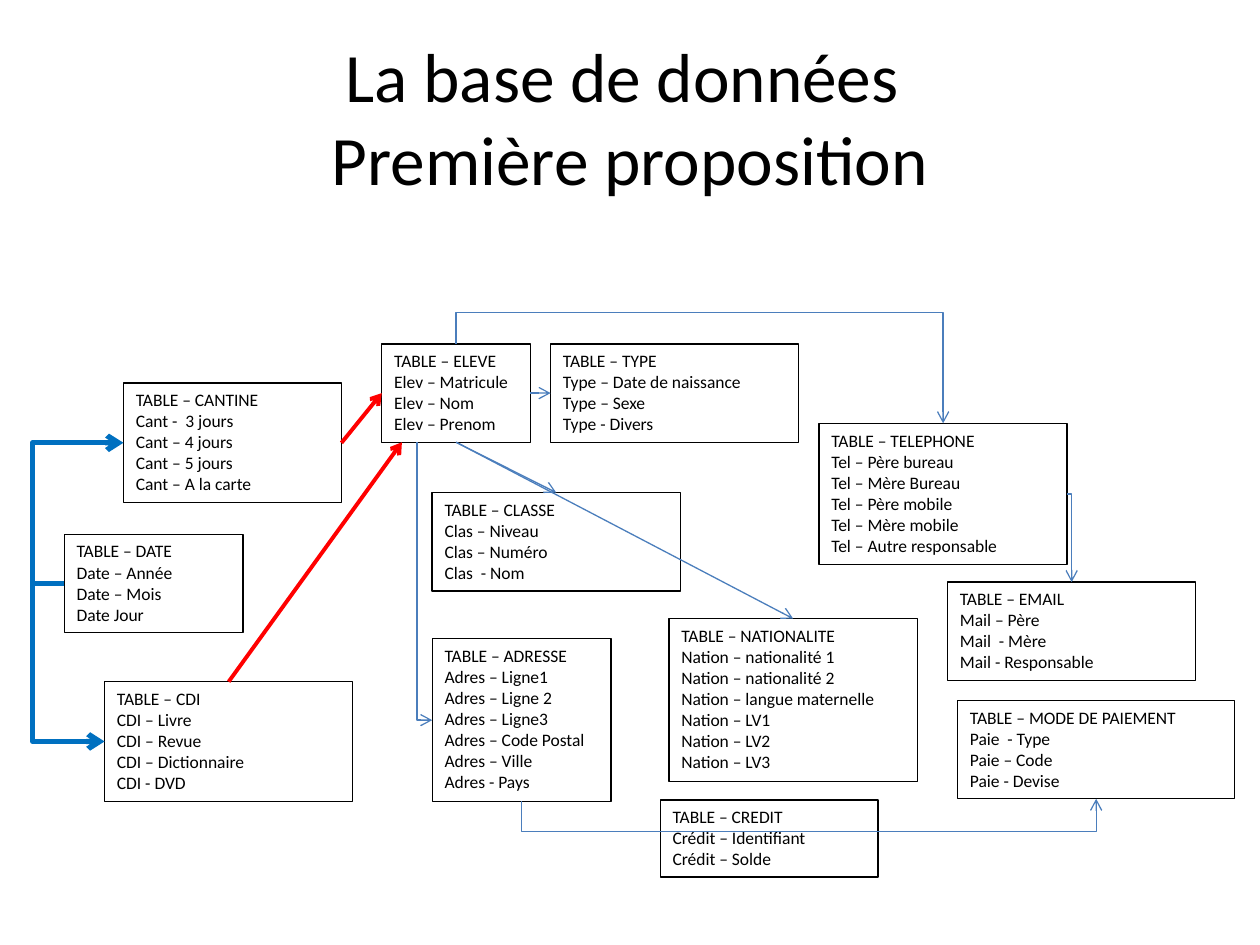
from lxml import etree
from pptx import Presentation
from pptx.dml.color import RGBColor
from pptx.enum.shapes import MSO_CONNECTOR
from pptx.enum.text import MSO_ANCHOR, MSO_AUTO_SIZE, PP_ALIGN
from pptx.oxml.ns import qn
from pptx.util import Inches, Pt

COLORS = {"text": "000000", "link": "4B7EBC", "date": "0070C0", "alert": "FF0000"}
FONT = "Calibri"
LINE_HEIGHT, PADDING = 0.17, 0.1

# name: (left, top, width, lines)
TABLES = {
    "ELEVE": (3.03, 2.73, 1.18, ["Elev – Matricule", "Elev – Nom", "Elev – Prenom"]),
    "ADRESSE": (3.43, 5.07, 1.42, ["Adres – Ligne1", "Adres – Ligne 2", "Adres – Ligne3",
                                   "Adres – Code Postal", "Adres – Ville", "Adres - Pays"]),
    "CLASSE": (3.43, 3.91, 1.97, ["Clas – Niveau", "Clas – Numéro", "Clas  - Nom"]),
    "MODE DE PAIEMENT": (7.6, 5.56, 2.2, ["Paie  - Type", "Paie – Code", "Paie - Devise"]),
    "CANTINE": (0.98, 3.04, 1.73, ["Cant -  3 jours", "Cant – 4 jours", "Cant – 5 jours",
                                   "Cant – A la carte"]),
    "CDI": (0.83, 5.41, 1.97, ["CDI – Livre", "CDI – Revue", "CDI – Dictionnaire", "CDI - DVD"]),
    "TELEPHONE": (6.5, 3.36, 1.97, ["Tel – Père bureau", "Tel – Mère Bureau", "Tel – Père mobile",
                                    "Tel – Mère mobile", "Tel – Autre responsable"]),
    "EMAIL": (7.52, 4.62, 1.97, ["Mail – Père", "Mail  - Mère", "Mail - Responsable"]),
    "NATIONALITE": (5.31, 4.91, 1.97, ["Nation – nationalité 1", "Nation – nationalité 2",
                                       "Nation – langue maternelle", "Nation – LV1",
                                       "Nation – LV2", "Nation – LV3"]),
    "TYPE": (4.37, 2.73, 1.97, ["Type – Date de naissance", "Type – Sexe", "Type - Divers"]),
    "DATE": (0.51, 4.24, 1.42, ["Date – Année", "Date – Mois", "Date Jour"]),
    "CREDIT": (5.24, 6.35, 1.73, ["Crédit – Identifiant", "Crédit – Solde"]),
}


def side(name, where):
    """Midpoint of one side of a table box."""
    left, top, width, lines = TABLES[name]
    height = PADDING + LINE_HEIGHT * (len(lines) + 1)
    fx, fy = {"left": (0, 0.5), "right": (1, 0.5), "top": (0.5, 0), "bottom": (0.5, 1)}[where]
    return left + fx * width, top + fy * height


class SchemaSlide:
    def __init__(self, slide):
        self.slide = slide

    def text(self, left, top, width, height, lines, size):
        box = self.slide.shapes.add_textbox(*map(Inches, (left, top, width, height)))
        frame = box.text_frame
        frame.word_wrap = True
        frame.text = "\n".join(lines)
        for paragraph in frame.paragraphs:
            for run in paragraph.runs:
                run.font.name = FONT
                run.font.size = Pt(size)
                run.font.color.rgb = RGBColor.from_string(COLORS["text"])
        return box

    def title(self, text):
        frame = self.text(0.5, 0.3, 9, 1.25, [text], 39.6).text_frame
        frame.vertical_anchor = MSO_ANCHOR.MIDDLE
        frame.paragraphs[0].alignment = PP_ALIGN.CENTER

    def table_box(self, name):
        left, top, width, fields = TABLES[name]
        lines = [f"TABLE – {name}"] + fields
        box = self.text(left, top, width, PADDING + LINE_HEIGHT * len(lines), lines, 10)
        box.text_frame.auto_size = MSO_AUTO_SIZE.SHAPE_TO_FIT_TEXT
        box.line.color.rgb = RGBColor.from_string(COLORS["text"])
        box.line.width = Pt(0.75)

    def arrow(self, start, end, color="link", weight=0.75, kind=MSO_CONNECTOR.STRAIGHT):
        link = self.slide.shapes.add_connector(kind, *map(Inches, (*start, *end)))
        link.line.color.rgb = RGBColor.from_string(COLORS[color])
        link.line.width = Pt(weight)
        properties = link._element.spPr
        etree.SubElement(properties.find(qn("a:ln")), qn("a:tailEnd"), type="arrow")
        etree.SubElement(properties, qn("a:effectLst"))
        return link

    def elbow(self, start, end, lane=None, vertical=False, color="link", weight=0.75):
        """Bent arrow; lane is the x (or y, if it starts vertically) of the middle leg."""
        link = self.arrow(start, end, color, weight, MSO_CONNECTOR.ELBOW)
        properties = link._element.spPr
        geometry = properties.find(qn("a:prstGeom"))
        if lane is None:
            geometry.set("prst", "bentConnector2")
        else:
            axis = 1 if vertical else 0
            ratio = (lane - start[axis]) / (end[axis] - start[axis])
            guides = geometry.get_or_add_avLst()
            etree.SubElement(guides, qn("a:gd"), name="adj1", fmla=f"val {round(ratio * 100000)}")
        if vertical:
            # A quarter turn swaps the sides of the frame around its centre
            left, top, width, height = link.left, link.top, link.width, link.height
            link.left, link.top = left + (width - height) // 2, top + (height - width) // 2
            link.width, link.height = height, width
            frame = properties.find(qn("a:xfrm"))
            frame.set("rot", "5400000")
            frame.set("flipH", str(int(end[1] < start[1])))
            frame.set("flipV", str(int(end[0] > start[0])))


def main():
    deck = Presentation()
    deck.slide_width, deck.slide_height = Inches(10), Inches(7.5)
    schema = SchemaSlide(deck.slides.add_slide(deck.slide_layouts[6]))

    schema.title("La base de données \vPremière proposition")

    # Tables of the database
    for name in TABLES:
        schema.table_box(name)

    # Date links
    for target in ("CANTINE", "CDI"):
        schema.elbow(side("DATE", "left"), side(target, "left"), 0.26, color="date", weight=3)

    # Links into the pupil table
    schema.arrow(side("CANTINE", "right"), side("ELEVE", "left"), "alert", 2.25)
    schema.arrow(side("CDI", "top"), (3.19, 3.51), "alert", 2.25)

    # Links out of the pupil table
    schema.arrow(side("ELEVE", "right"), side("TYPE", "left"))
    for target in ("CLASSE", "NATIONALITE"):
        schema.arrow(side("ELEVE", "bottom"), (side(target, "top")))
    schema.elbow(side("ELEVE", "top"), side("TELEPHONE", "top"), 2.48, vertical=True)
    schema.elbow((3.31, 3.51), side("ADRESSE", "left"), vertical=True)

    # Contact and payment links
    schema.elbow(side("TELEPHONE", "right"), side("EMAIL", "top"))
    schema.elbow(side("ADRESSE", "bottom"), side("MODE DE PAIEMENT", "bottom"), 6.6, vertical=True)

    deck.save("out.pptx")


if __name__ == "__main__":
    main()
